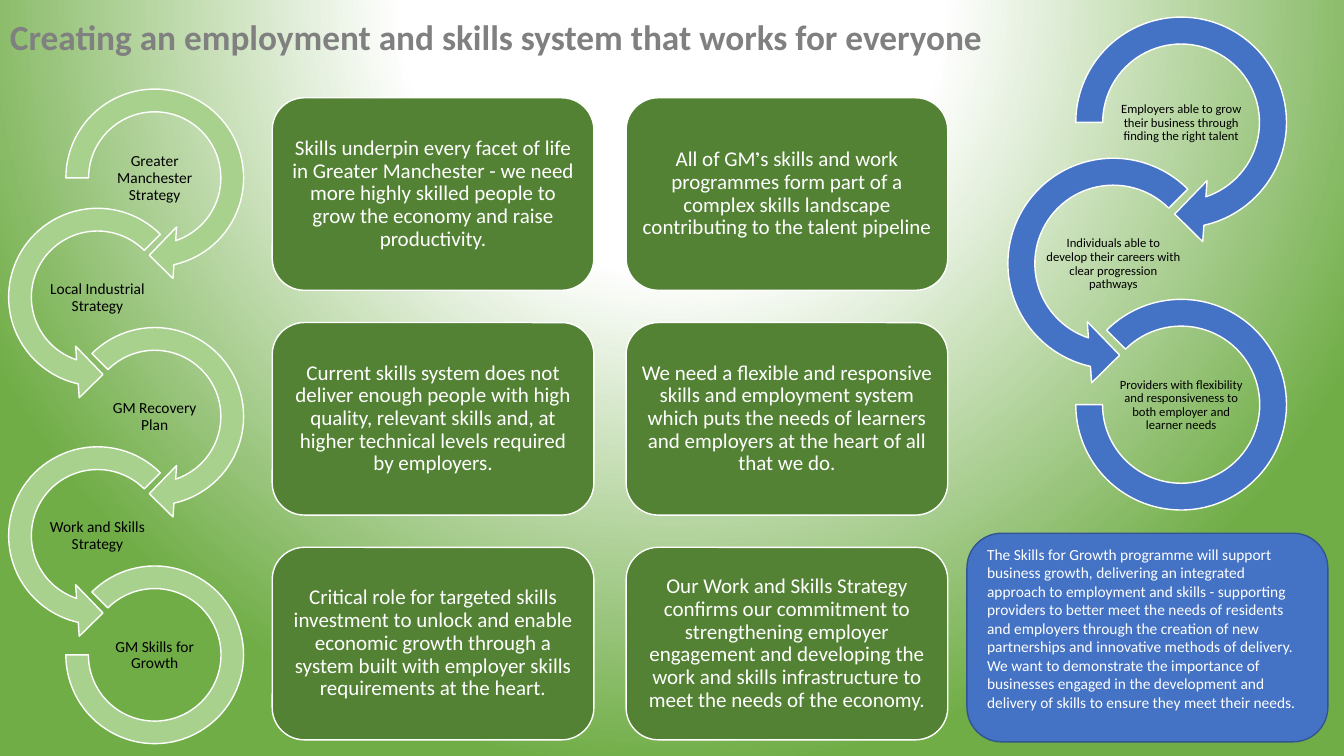
from lxml import etree
from pptx import Presentation
from pptx.dml.color import RGBColor
from pptx.enum.shapes import MSO_SHAPE
from pptx.enum.text import MSO_ANCHOR, PP_ALIGN
from pptx.util import Inches, Pt

RIGHT, LEFT = MSO_SHAPE.CIRCULAR_ARROW, MSO_SHAPE.LEFT_CIRCULAR_ARROW
ARC, ROUND = MSO_SHAPE.BLOCK_ARC, MSO_SHAPE.ROUNDED_RECTANGLE
MIDDLE, CENTER, START = MSO_ANCHOR.MIDDLE, PP_ALIGN.CENTER, PP_ALIGN.LEFT
WIDE, HIGH = 13.33, 7.5
NS = "http://schemas.openxmlformats.org/drawingml/2006/main"

deck = Presentation()
deck.slide_width, deck.slide_height = Inches(WIDE), Inches(HIGH)
slide = deck.slides.add_slide(deck.slide_layouts[6])
shapes = slide.shapes


def paint(fmt, color):
    """Give a fill or a font a solid colour."""
    if hasattr(fmt, "solid"):
        fmt.solid()
        fmt.fore_color.rgb = RGBColor.from_string(color)
    else:
        fmt.color.rgb = RGBColor.from_string(color)


def write(shape, paras, color, inset, size, align=CENTER, gap=0.9, bold=False):
    """Set the text of a shape; each paragraph is a list of (text, font)."""
    frame = shape.text_frame
    sides = dict.fromkeys(("left", "top", "right", "bottom"), inset)
    if not isinstance(inset, float):
        sides = dict(zip(sides, inset))
    for side, length in sides.items():
        setattr(frame, "margin_" + side, Inches(length))
    for key, value in {"word_wrap": True, "vertical_anchor": MIDDLE}.items():
        setattr(frame, key, value)
    for i, runs in enumerate(paras):
        para = frame.add_paragraph() if i else frame.paragraphs[0]
        for key, value in {"alignment": align, "line_spacing": gap}.items():
            setattr(para, key, value)
        for text, face in runs:
            run = para.add_run()
            run.text = text
            style = {"name": face, "size": Pt(size), "bold": bold}
            for key, value in style.items():
                setattr(run.font, key, value)
            paint(run.font, color)


# Background: white glow from the top, green at the edges
slide.background.fill.gradient()
grad = slide.element.find(f".//{{{NS}}}gradFill")
stops = "".join(
    f'<a:gs pos="{pos * 1000}"><a:srgbClr val="{color}"/></a:gs>'
    for pos, color in ((0, "FFFFFF"), (35, "FFFFFF"), (100, "70AD47")))
glow = etree.fromstring(
    f'<a:gradFill xmlns:a="{NS}" rotWithShape="1"><a:gsLst>{stops}</a:gsLst>'
    '<a:path path="circle"><a:fillToRect l="50000" t="-80000" r="50000" b="180000"/>'
    '</a:path></a:gradFill>')
grad.getparent().replace(grad, glow)

# Title
title = shapes.add_textbox(0, Inches(0.01), Inches(10.81), Inches(HIGH / 10))
head = "Creating an employment and skills system that works for everyone"
write(title, [[(head, "Calibri")]], "808080", (0.1, 0.05, 0.1, 0.05), 25.2,
      START, bold=True)

# Chains of rings: left, top, ring size, row pitch, colour, text size, labels
chains = [
    (0.51, 0.74, 2.05, 1.183, "A9D18E", 11, [
        "Greater Manchester Strategy", "Local Industrial Strategy",
        "GM Recovery Plan", "Work and Skills Strategy", "GM Skills for Growth"]),
    (10.5, 0, 2.43, 1.4, "4472C4", 9, [
        "Employers able to grow their business through finding the right talent",
        "Individuals able to develop their careers with clear progression pathways",
        "Providers with flexibility and responsiveness to both employer and learner needs"]),
]
for left, top, ring, pitch, color, size, labels in chains:
    for row, label in enumerate(labels):
        x = left - row % 2 * ring * 0.277
        y = top + row * pitch
        pad = 0
        if row == len(labels) - 1:
            kind, adj, pad = ARC, (135, 108, 0.127), ring * 0.07
        elif row % 2:
            kind, adj = LEFT, (0.11, 11.423, 63, 189, 0.125)
        else:
            kind, adj = RIGHT, (0.11, 11.423, 45, 135 if row else 108, 0.125)
        side = Inches(ring - 2 * pad)
        link = shapes.add_shape(kind, Inches(x + pad), Inches(y + pad), side, side)
        for i, value in enumerate(adj):
            link.adjustments[i] = value
        link.shadow.inherit = False
        paint(link.fill, color)
        paint(link.line.fill, "FFFFFF")
        link.line.width = Pt(1)
        note = shapes.add_textbox(Inches(x + ring * 0.22), Inches(y + ring * 0.363),
                                  Inches(ring * 0.56), Inches(ring * 0.28))
        write(note, [[(label, "Calibri")]], "000000", 0.01, size)

# Cards in two columns and three rows, then the summary panel
cards = [
    [("Skills underpin every facet of life in Greater Manchester - we need more "
      "highly skilled people to grow the economy and raise productivity.", "Calibri")],
    [("All of GM", "Calibri"), ("’", "League Spartan"),
     ("s skills and work programmes form part of a complex skills landscape "
      "contributing to the talent pipeline", "Calibri")],
    [("Current skills system does not deliver enough people with high quality, "
      "relevant skills and, at higher technical levels required by employers.", "Calibri")],
    [("We need a flexible and responsive skills and employment system which puts "
      "the needs of learners and employers at the heart of all that we do.", "Calibri")],
    [("Critical role for targeted skills investment to unlock and enable economic "
      "growth through a system built with employer skills requirements at the heart.",
      "Calibri")],
    [("Our Work and Skills Strategy confirms our commitment to strengthening employer "
      "engagement and developing the work and skills infrastructure to meet the needs "
      "of the economy.", "Calibri")],
]
panel = [
    [("The Skills for Growth programme will support business growth, delivering an "
      "integrated approach to employment and skills - supporting providers to better "
      "meet the needs of residents and employers through the creation of new "
      "partnerships and innovative methods of delivery.", "Calibri")],
    [("We want to demonstrate the importance of businesses engaged in the development "
      "and delivery of skills to ensure they meet their needs.", "Calibri")],
]
boxes = [((2.7 + i % 2 * 3.51, 0.97 + i // 2 * 2.23, 3.19, 1.91), "548235", "FFFFFF",
          [card], (0.06, 15)) for i, card in enumerate(cards)]
boxes.append(((9.59, 5.29, 3.58, 2.07), "4472C4", "325491", panel,
              ((0.1, 0.05, 0.1, 0.24), 11, START, 1.0)))
for place, color, edge, paras, look in boxes:
    box = shapes.add_shape(ROUND, *map(Inches, place))
    box.shadow.inherit = False
    paint(box.fill, color)
    paint(box.line.fill, edge)
    box.line.width = Pt(1)
    write(box, paras, "FFFFFF", *look)

deck.save("out.pptx")
